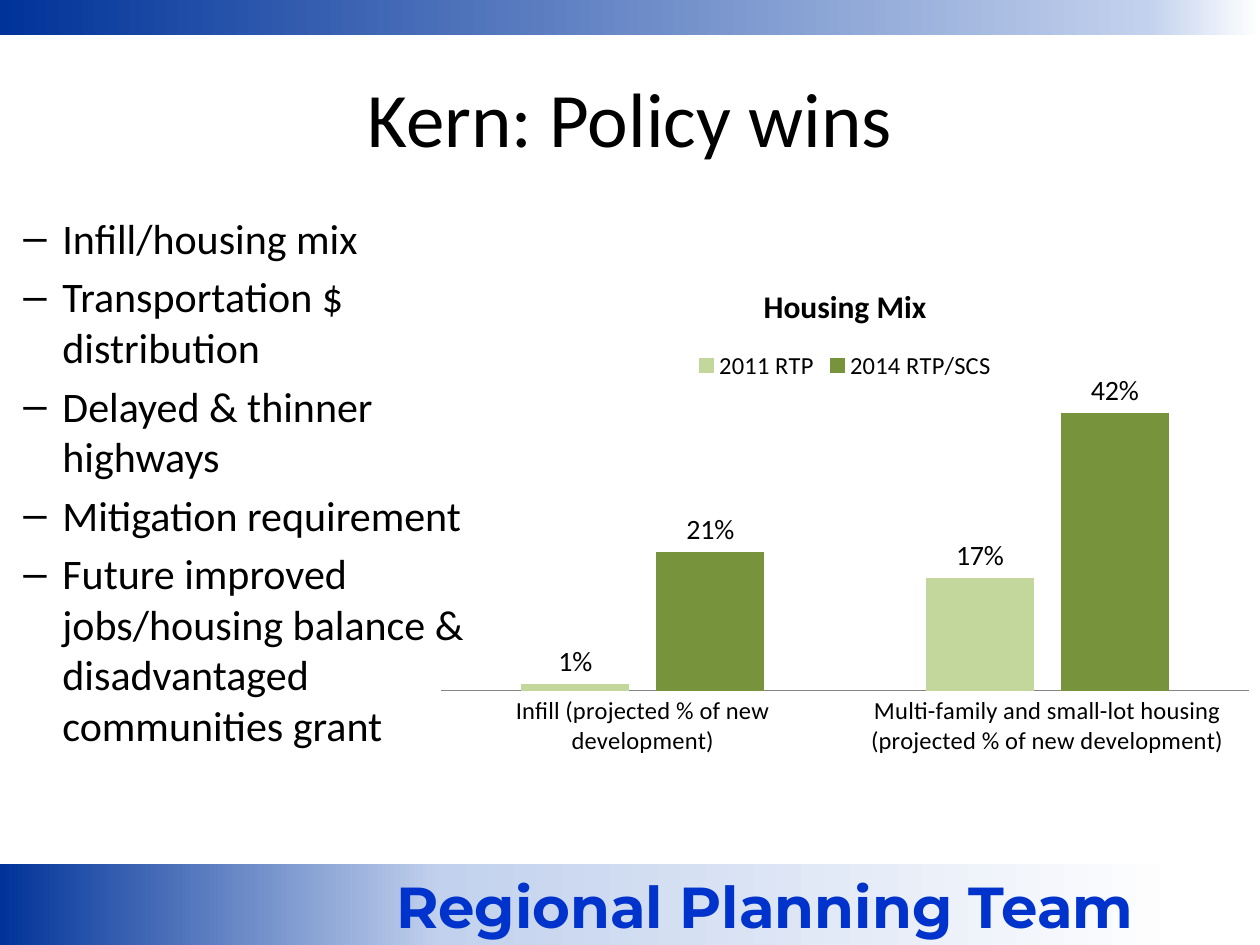
from copy import deepcopy
from dataclasses import dataclass

from lxml.etree import SubElement as Sub
from pptx import Presentation
from pptx.chart.data import CategoryChartData as Data
from pptx.dml.color import RGBColor as Rgb
from pptx.enum.chart import XL_CHART_TYPE as Kind, XL_LABEL_POSITION as Spot
from pptx.enum.chart import XL_LEGEND_POSITION as Side, XL_TICK_MARK as Tick
from pptx.enum.shapes import MSO_SHAPE as Form
from pptx.enum.text import MSO_ANCHOR as Anchor, PP_ALIGN as Align
from pptx.oxml.ns import qn
from pptx.util import Cm, Pt


@dataclass(frozen=True)
class Theme:
    font: str = "Calibri"
    strong: str = "Montserrat"
    text: str = "000000"
    navy: str = "003399"
    pale: str = "C2D1ED"
    white: str = "FFFFFF"
    blue: str = "0033CC"
    line: str = "868686"
    light: str = "C3D69B"
    green: str = "77933C"
    title: int = 44
    foot: int = 33
    body: int = 24
    head: int = 18
    label: int = 16
    axis: int = 14


def put(obj, **vals):
    for name, val in vals.items():
        setattr(obj, name, val)


def style(font, size, color, name, bold=False):
    put(font, size=Pt(size), name=name, bold=bold)
    font.color.rgb = Rgb.from_string(color)


class Maker:
    def __init__(self, slide, theme):
        self.slide, self.theme = slide, theme

    def font(self, font, size, bold=False):
        style(font, size, self.theme.text, self.theme.font, bold)

    def title(self, text, box):
        shape = self.slide.shapes.title
        put(shape, **box)
        frame = shape.text_frame
        put(frame, text=text, vertical_anchor=Anchor.MIDDLE)
        para = frame.paragraphs[0]
        para.alignment = Align.CENTER
        self.font(para.runs[0].font, self.theme.title)

    def band(self, box, stops):
        """Draw a bar that fades from left to right through three stops."""
        bar = self.slide.shapes.add_shape(Form.RECTANGLE, *box.values())
        bar.shadow.inherit = False
        bar.line.fill.background()
        bar.fill.gradient()
        bar.fill.gradient_angle = 0
        stop_list = bar._element.spPr.find(".//" + qn("a:gsLst"))
        stop_list.append(deepcopy(stop_list[-1]))
        for stop, (spot, color) in zip(bar.fill.gradient_stops, stops):
            stop.color.rgb = Rgb.from_string(color)
            stop.position = spot
        return bar

    def footer(self, bar, text, right):
        frame = bar.text_frame
        put(frame, text=text, margin_right=right, word_wrap=True,
            vertical_anchor=Anchor.TOP)
        para = frame.paragraphs[0]
        para.alignment = Align.RIGHT
        style(para.runs[0].font, self.theme.foot, self.theme.blue,
              self.theme.strong, True)

    def bullets(self, items, box, left, hang):
        frame = self.slide.shapes.add_textbox(*box.values()).text_frame
        frame.word_wrap = True
        frame.text = "\n".join(items)
        for para in frame.paragraphs:
            self.font(para.runs[0].font, self.theme.body)
            props = para._p.get_or_add_pPr()
            props.set("marL", str(left))
            props.set("indent", str(-hang))
            space = Sub(props, qn("a:spcBef"))
            Sub(space, qn("a:spcPct"), val="20000")
            Sub(props, qn("a:buFont"), typeface="Arial")
            Sub(props, qn("a:buChar"), char="–")

    def chart(self, title, cats, rows, box, plot):
        theme = self.theme
        data = Data(number_format="0%")
        data.categories = cats
        for name, vals, _ in rows:
            data.add_series(name, vals)
        chart = self.slide.shapes.add_chart(
            Kind.COLUMN_CLUSTERED, *box.values(), data).chart
        self.font(chart.font, theme.axis)
        put(chart, has_title=True, has_legend=True)
        head = chart.chart_title.text_frame
        head.text = title
        self.font(head.paragraphs[0].runs[0].font, theme.head, True)
        put(chart.legend, position=Side.TOP, include_in_layout=False)
        self.font(chart.legend.font, theme.axis)

        axis = chart.category_axis
        put(axis, major_tick_mark=Tick.NONE, minor_tick_mark=Tick.NONE)
        self.font(axis.tick_labels.font, theme.axis)
        axis.format.line.color.rgb = Rgb.from_string(theme.line)
        put(chart.value_axis, visible=False, has_major_gridlines=False,
            minimum_scale=0, maximum_scale=0.45)

        bars = chart.plots[0]
        put(bars, gap_width=150, overlap=-25, vary_by_categories=False)
        for row, (_, _, color) in zip(bars.series, rows):
            row.format.fill.solid()
            row.format.fill.fore_color.rgb = Rgb.from_string(color)
            tags = row.data_labels
            put(tags, show_value=True, number_format="0%",
                number_format_is_linked=False, position=Spot.OUTSIDE_END)
            self.font(tags.font, theme.label)
        self.place(chart, plot)

    def place(self, chart, plot):
        """Fix the inner plot area, in fractions of the chart."""
        area = chart._chartSpace.find(".//" + qn("c:plotArea"))
        old = area.find(qn("c:layout"))
        if old is not None:
            area.remove(old)
        frame = Sub(area, qn("c:layout"))
        area.insert(0, frame)
        grid = Sub(frame, qn("c:manualLayout"))
        parts = {"layoutTarget": "inner", "xMode": "edge", "yMode": "edge"}
        for name, val in {**parts, **plot}.items():
            Sub(grid, qn("c:" + name), val=str(val))


def rect(left, top, width, height):
    return {"left": Cm(left), "top": Cm(top),
            "width": Cm(width), "height": Cm(height)}


def main():
    theme = Theme()
    deck = Presentation()
    put(deck, slide_width=Cm(25.4), slide_height=Cm(19.05))
    make = Maker(deck.slides.add_slide(deck.slide_layouts[5]), theme)

    foot = make.band(rect(0, 17.42, 25.4, 1.65),
                     [(0, theme.navy), (0.35, theme.pale), (0.94, theme.white)])
    make.footer(foot, "Regional Planning Team", Cm(2.55))
    make.band(rect(0, 0, 25.4, 0.71),
              [(0, theme.navy), (0.91, theme.pale), (1, theme.white)])
    make.title("Kern: Policy wins", rect(1.27, 0.76, 22.86, 3.18))
    make.bullets(
        ["Infill/housing mix",
         "Transportation $ distribution",
         "Delayed & thinner highways",
         "Mitigation requirement",
         "Future improved jobs/housing balance & "
         "disadvantaged communities grant"],
        rect(-1.07, 4.15, 11.23, 12.57), Cm(2.08), Cm(0.79))
    make.chart(
        "Housing Mix",
        ["Infill (projected % of new development)",
         "Multi-family and small-lot housing (projected % of new development)"],
        [("2011 RTP", (0.01, 0.17), theme.light),
         ("2014 RTP/SCS", (0.21, 0.42), theme.green)],
        rect(8.54, 5.29, 16.99, 10.16),
        {"x": 0.02, "y": 0.26, "w": 0.96, "h": 0.59})
    deck.save("out.pptx")


if __name__ == "__main__":
    main()
